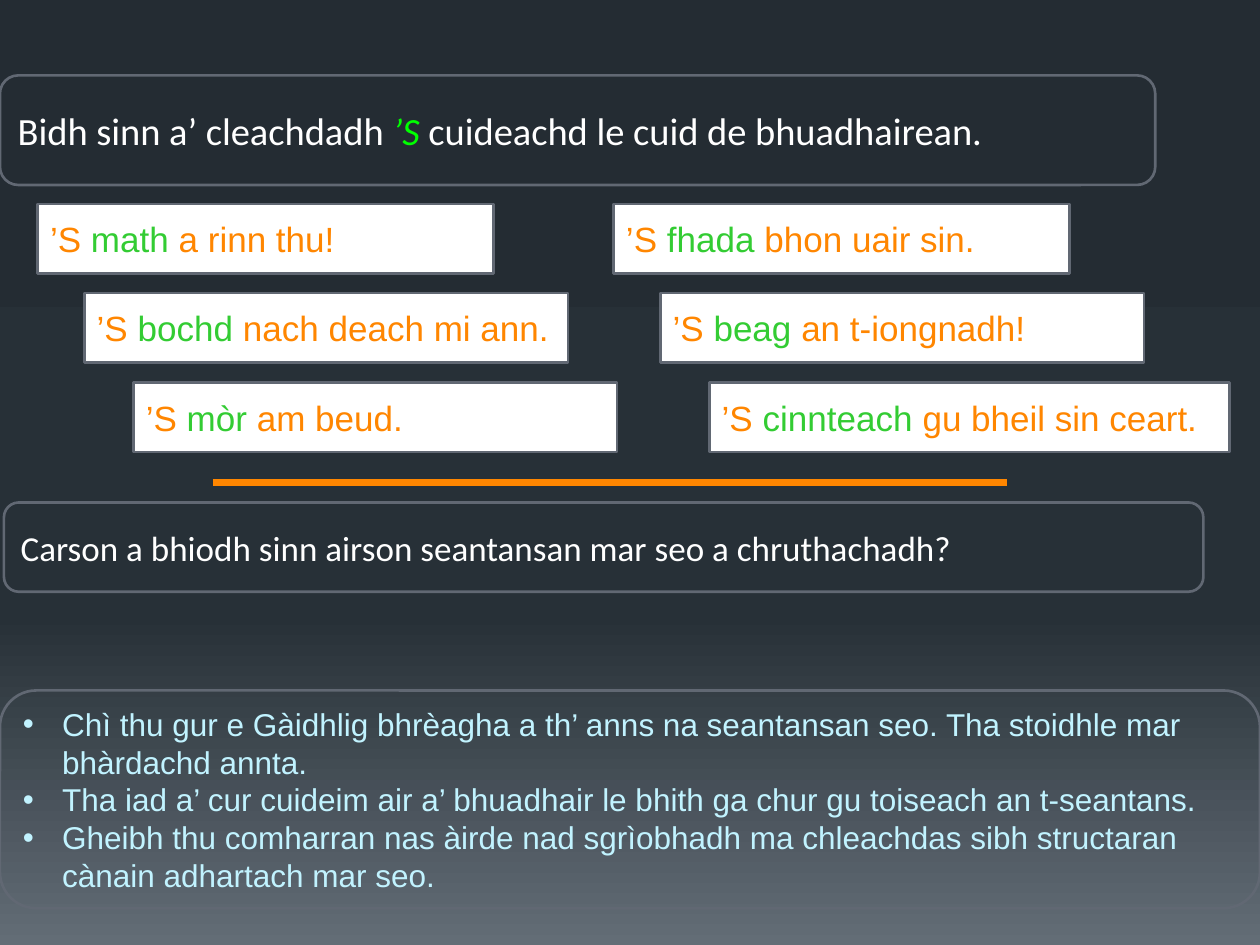
from copy import deepcopy

from pptx import Presentation
from pptx.dml.color import RGBColor
from pptx.enum.shapes import MSO_CONNECTOR, MSO_SHAPE
from pptx.enum.text import MSO_ANCHOR, PP_ALIGN
from pptx.oxml.ns import qn
from pptx.oxml.xmlchemy import OxmlElement
from pptx.util import Cm, Pt

COLOURS = {
    "night": "242C33",
    "slate": "273037",
    "mist": "636D76",
    "border": "616873",
    "white": "FFFFFF",
    "orange": "FF8600",
    "green": "33CC33",
    "lime": "00FF00",
    "ice": "C1F3FF",
}


def rgb(name):
    return RGBColor.from_string(COLOURS[name])


def add_text(paragraph, text, size=20, font="Arial", colour="white", italic=False):
    run = paragraph.add_run()
    run.text = text
    run.font.size = Pt(size)
    run.font.name = font
    run.font.italic = italic
    run.font.color.rgb = rgb(colour)
    paragraph.alignment = PP_ALIGN.LEFT


def add_bullet(paragraph, indent):
    properties = paragraph._p.get_or_add_pPr()
    properties.set("marL", str(Cm(indent)))
    properties.set("indent", str(-Cm(indent)))
    bullet_font = OxmlElement("a:buFont")
    bullet_font.set("typeface", "Arial")
    bullet = OxmlElement("a:buChar")
    bullet.set("char", "•")
    properties.extend([bullet_font, bullet])


def add_panel(slide, box, outline=MSO_SHAPE.ROUNDED_RECTANGLE, fill=None):
    panel = slide.shapes.add_shape(outline, *map(Cm, box))
    panel.shadow.inherit = False
    if fill:
        panel.fill.solid()
        panel.fill.fore_color.rgb = rgb(fill)
    else:
        panel.fill.background()
    panel.line.color.rgb = rgb("border")
    panel.line.width = Pt(1.5)
    panel.text_frame.word_wrap = True
    panel.text_frame.vertical_anchor = MSO_ANCHOR.MIDDLE
    return panel.text_frame


def paint_background(slide):
    fill = slide.background.fill
    fill.gradient()
    fill.gradient_angle = 270
    stop_list = next(slide.element.iter(qn("a:gsLst")))
    stop_list.append(deepcopy(stop_list[-1]))
    stops = zip(fill.gradient_stops, ("night", "slate", "mist"), (0, 0.65, 1))
    for stop, colour, position in stops:
        stop.color.rgb = rgb(colour)
        stop.position = position


def add_heading(slide, box, parts, size):
    paragraph = add_panel(slide, box).paragraphs[0]
    for text, style in parts:
        add_text(paragraph, text, size=size, font="Calibri", **style)


def add_examples(slide, box, columns):
    left, top, width, height = box
    column_step, row_step, row_height = 11.61, 1.8, 1.4
    offsets = (0, 0.94, 1.93)
    for column, sentences in enumerate(columns):
        for row, (adjective, ending, card_width) in enumerate(sentences):
            card = (left + column * column_step + offsets[row],
                    top + row * row_step, card_width, row_height)
            frame = add_panel(slide, card, MSO_SHAPE.FLOWCHART_PROCESS, "white")
            paragraph = frame.paragraphs[0]
            add_text(paragraph, "’S ", colour="orange")
            add_text(paragraph, adjective, colour="green")
            add_text(paragraph, ending, colour="orange")


def add_divider(slide, box):
    left, top, width, height = box
    divider = slide.shapes.add_connector(
        MSO_CONNECTOR.STRAIGHT, Cm(left), Cm(top), Cm(left + width), Cm(top + height))
    divider.line.color.rgb = rgb("orange")
    divider.line.width = Pt(3.75)
    divider._element.spPr.append(OxmlElement("a:effectLst"))


def add_reasons(slide, box, reasons):
    frame = add_panel(slide, box)
    for index, reason in enumerate(reasons):
        paragraph = frame.add_paragraph() if index else frame.paragraphs[0]
        add_text(paragraph, reason, size=18, colour="ice")
        add_bullet(paragraph, 0.79)


def main():
    presentation = Presentation()
    presentation.slide_width = Cm(25.4)
    presentation.slide_height = Cm(19.05)
    slide = presentation.slides.add_slide(presentation.slide_layouts[6])
    paint_background(slide)

    add_heading(slide, (0, 1.52, 23.29, 2.21), [
        ("Bidh sinn a’ cleachdadh ", {}),
        ("’S ", {"colour": "lime", "italic": True}),
        ("cuideachd le cuid de bhuadhairean.", {}),
    ], size=22)
    add_examples(slide, (0.76, 4.11, 24.03, 5), [
        [("math", " a rinn thu!", 9.19),
         ("bochd ", "nach deach mi ann.", 9.75),
         ("mòr", " am beud.", 9.75)],
        [("fhada ", "bhon uair sin.", 9.19),
         ("beag", " an t-iongnadh!", 9.75),
         ("cinnteach ", "gu bheil sin ceart.", 10.49)],
    ])
    add_heading(slide, (0.08, 10.13, 24.18, 1.8), [
        ("Carson a bhiodh sinn airson seantansan mar seo a chruthachadh?", {}),
    ], size=20)
    add_divider(slide, (4.29, 9.73, 16, 0))
    add_reasons(slide, (0, 13.92, 25.4, 4.39), [
        "Chì thu gur e Gàidhlig bhrèagha a th’ anns na seantansan seo. "
        "Tha stoidhle mar bhàrdachd annta.",
        "Tha iad a’ cur cuideim air a’ bhuadhair le bhith ga chur gu toiseach an t-seantans.",
        "Gheibh thu comharran nas àirde nad sgrìobhadh ma chleachdas sibh "
        "structaran cànain adhartach mar seo.",
    ])
    presentation.save("out.pptx")


if __name__ == "__main__":
    main()
